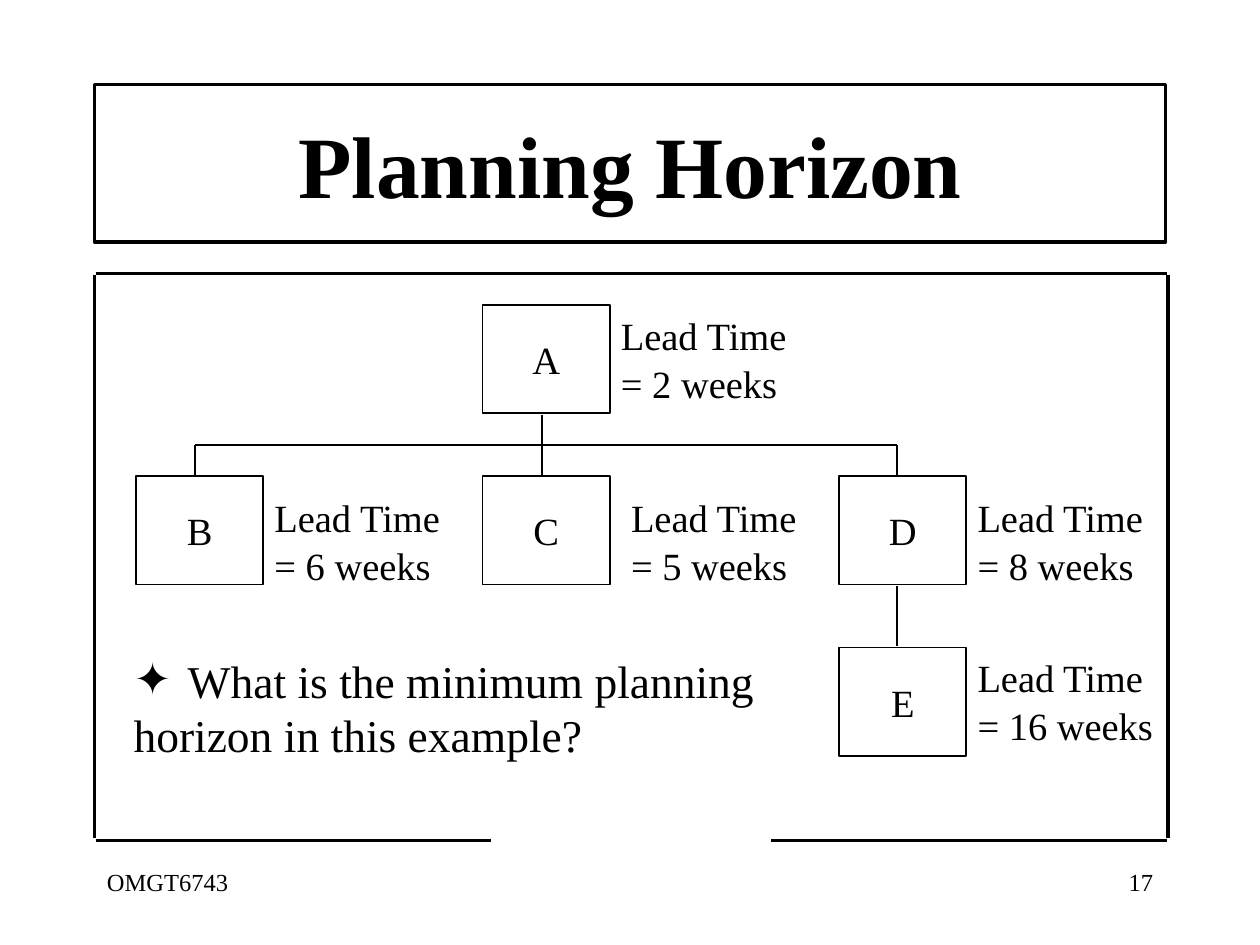
from lxml import etree
from pptx import Presentation
from pptx.dml.color import RGBColor
from pptx.enum.shapes import MSO_CONNECTOR, MSO_SHAPE
from pptx.enum.text import MSO_ANCHOR, MSO_AUTO_SIZE, PP_ALIGN
from pptx.oxml.ns import qn
from pptx.util import Inches, Pt

RECTANGLE = MSO_SHAPE.RECTANGLE
STRAIGHT = MSO_CONNECTOR.STRAIGHT
LEFT, CENTER, RIGHT = PP_ALIGN.LEFT, PP_ALIGN.CENTER, PP_ALIGN.RIGHT
TOP, MIDDLE = MSO_ANCHOR.TOP, MSO_ANCHOR.MIDDLE
NO_AUTOFIT = MSO_AUTO_SIZE.NONE

FONT = "Times New Roman"
COLORS = {"ink": "000000", "paper": "FFFFFF"}
INK = RGBColor.from_string(COLORS["ink"])
PAPER = RGBColor.from_string(COLORS["paper"])


def write(box, lines, size, align=LEFT, anchor=TOP, bold=False):
    frame = box.text_frame
    frame.auto_size = NO_AUTOFIT
    frame.word_wrap = True
    frame.vertical_anchor = anchor
    frame.text = "\n".join(lines)
    for number, para in enumerate(frame.paragraphs):
        para.alignment = align
        para.space_before = Pt(1 if number else 0)
        para.font.name = FONT
        para.font.size = Pt(size)
        para.font.bold = bold
        para.font.color.rgb = INK


def draw_line(x1, y1, x2, y2, width):
    line = page.shapes.add_connector(
        STRAIGHT, Inches(x1), Inches(y1), Inches(x2), Inches(y2))
    line.line.color.rgb = INK
    line.line.width = Pt(width)
    etree.SubElement(line._element.spPr, qn("a:effectLst"))


deck = Presentation()
deck.slide_width, deck.slide_height = Inches(10), Inches(7.5)
page = deck.slides.add_slide(deck.slide_layouts[1])

# Title and its frame
title = page.shapes.title
title.left, title.top = Inches(0.17), Inches(0.67)
title.width, title.height = Inches(9.67), Inches(1.25)
write(title, ["Planning Horizon"], 50, CENTER, MIDDLE, bold=True)

title_frame = page.shapes.add_shape(
    RECTANGLE, Inches(0.75), Inches(0.67), Inches(8.5), Inches(1.25))
title_frame.shadow.inherit = False
title_frame.fill.background()
title_frame.line.color.rgb = INK
title_frame.line.width = Pt(2)

# Content frame, open in the middle of its lower edge
for ends in [(0.76, 2.17, 9.26, 2.17), (0.75, 2.18, 0.75, 6.65),
             (9.27, 2.18, 9.27, 6.65), (0.76, 6.67, 3.9, 6.67),
             (6.12, 6.67, 9.26, 6.67)]:
    draw_line(*ends, width=2)

# Question: bullet on the first line, second line back at the margin
question = page.placeholders[1]
question.left, question.top = Inches(0.96), Inches(5.13)
question.width, question.height = Inches(5.19), Inches(1)
question.text_frame.text = "What is the minimum planning\nhorizon in this example?"
for para, bullet, indent in zip(question.text_frame.paragraphs, ["✦", None], [0.43, 0]):
    properties = para._p.get_or_add_pPr()
    properties.set("marL", str(Inches(indent)))
    properties.set("indent", str(-Inches(indent)))
    if bullet:
        etree.SubElement(properties, qn("a:buChar"), char=bullet)
    else:
        etree.SubElement(properties, qn("a:buNone"))
    para.space_before = Pt(0)
    para.font.name = FONT
    para.font.size = Pt(26)
    para.font.color.rgb = INK

# Product structure: name, box left, box top, label left, label top, weeks
NODES = [("A", 3.83, 2.42, 4.83, 2.43, 2),
         ("B", 1.08, 3.78, 2.08, 3.87, 6),
         ("C", 3.83, 3.78, 4.91, 3.87, 5),
         ("D", 6.66, 3.78, 7.66, 3.87, 8),
         ("E", 6.66, 5.14, 7.66, 5.14, 16)]
for name, left, top, label_left, label_top, weeks in NODES:
    node = page.shapes.add_shape(
        RECTANGLE, Inches(left), Inches(top), Inches(1.01), Inches(0.86))
    node.shadow.inherit = False
    node.fill.solid()
    node.fill.fore_color.rgb = PAPER
    node.line.color.rgb = INK
    node.line.width = Pt(1)
    write(node, [name], 22, CENTER, MIDDLE)

    label = page.shapes.add_textbox(
        Inches(label_left), Inches(label_top), Inches(1.59), Inches(0.83))
    write(label, ["Lead Time", f"= {weeks} weeks"], 22)

# Branches between the levels
for ends in [(1.55, 3.53, 7.12, 3.53), (4.3, 3.29, 4.3, 3.77),
             (1.55, 3.53, 1.55, 3.77), (7.12, 3.53, 7.12, 3.77),
             (7.12, 4.65, 7.12, 5.13)]:
    draw_line(*ends, width=1)

# Footer
for text, left, align in [("OMGT6743", 0.75, LEFT), ("17", 7.17, RIGHT)]:
    footer = page.shapes.add_textbox(
        Inches(left), Inches(6.83), Inches(2.08), Inches(0.5))
    write(footer, [text], 14, align)

deck.save("out.pptx")
